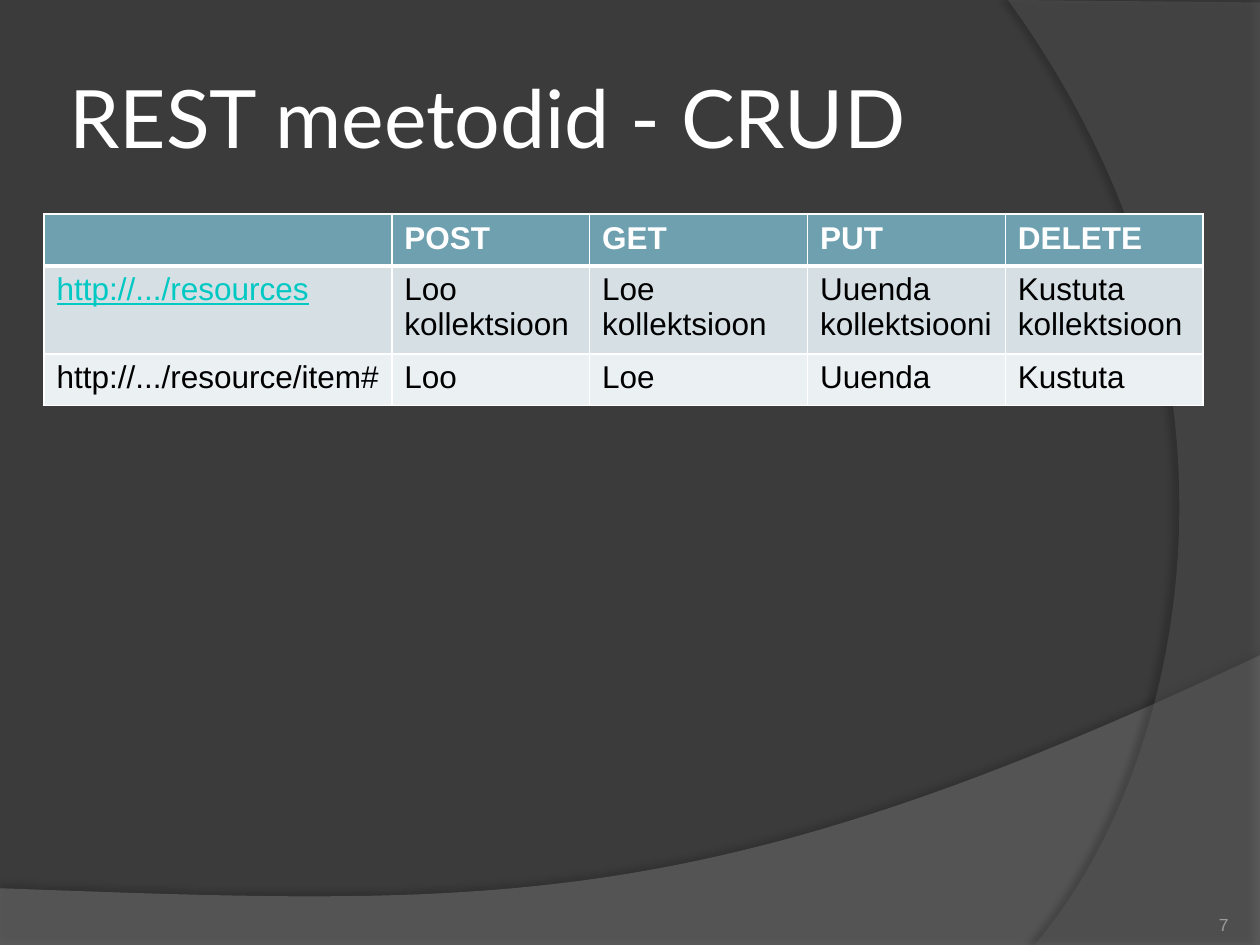
from dataclasses import dataclass

from lxml.etree import SubElement
from pptx import Presentation
from pptx.dml.color import RGBColor
from pptx.enum.text import MSO_ANCHOR as Anchor, PP_ALIGN as Align
from pptx.oxml.ns import qn
from pptx.util import Inches, Pt


@dataclass(frozen=True)
class Theme:
    background: str = "3B3B3B"
    wave: str = "7F7F7F"
    arc: str = "5E5E5E"
    shadow: str = "000000"
    white: str = "FFFFFF"
    text: str = "000000"
    link: str = "00C8C3"
    header: str = "6EA0B0"
    bands: tuple = ("D5DFE4", "EBF0F2")
    number: str = "9D9B9A"
    title_font: str = "Lato"
    body_font: str = "Arial"
    title_size: int = 46
    table_size: int = 18
    number_size: int = 10


THEME = Theme()
COLUMN_WIDTHS = (2.76, 1.57, 1.73, 1.57, 1.57)
ROW_HEIGHT = 0.41
ROWS = (
    ("", "POST", "GET", "PUT", "DELETE"),
    ("http://.../resources", "Loo kollektsioon", "Loe kollektsioon",
     "Uuenda kollektsiooni", "Kustuta kollektsioon"),
    ("http://.../resource/item#", "Loo", "Loe", "Uuenda", "Kustuta"),
)


def rgb(color):
    return RGBColor.from_string(color)


def style_text(paragraph, font, size, color, bold=False, underline=False):
    for run in paragraph.runs:
        run.font.name = font
        run.font.size = Pt(size)
        run.font.color.rgb = rgb(color)
        run.font.bold = bold
        run.font.underline = underline


def set_frame(text_frame, inset, anchor):
    text_frame.word_wrap = True
    text_frame.vertical_anchor = anchor
    text_frame.margin_left = text_frame.margin_right = Inches(inset)
    text_frame.margin_top = text_frame.margin_bottom = Inches(inset)


def add_alpha(color_element, percent):
    SubElement(color_element, qn("a:alpha"), val=str(percent * 1000))


def bezier(start, control_1, control_2, end, steps=48):
    """Points along a cubic curve, both ends included."""
    points = []
    for step in range(steps + 1):
        t = step / steps
        weights = ((1 - t) ** 3, 3 * t * (1 - t) ** 2, 3 * t * t * (1 - t), t ** 3)
        points.append(tuple(
            sum(w * v for w, v in zip(weights, values))
            for values in zip(start, control_1, control_2, end)))
    return points


def add_backdrop(slide, box, points, color, opacity, shadow):
    """Translucent shape with a soft shadow; points are relative to the box."""
    left, top = box
    corners = [(Inches(left + x), Inches(top + y)) for x, y in points]
    builder = slide.shapes.build_freeform(*corners[0])
    builder.add_line_segments(corners[1:], close=True)
    shape = builder.convert_to_shape()
    shape.fill.solid()
    shape.fill.fore_color.rgb = rgb(color)
    shape.line.fill.background()
    properties = shape.element.spPr
    add_alpha(properties.find(qn("a:solidFill"))[0], opacity)

    shadow_opacity, blur, distance, angle = shadow
    effects = SubElement(properties, qn("a:effectLst"))
    outer = SubElement(
        effects, qn("a:outerShdw"), blurRad=str(Pt(blur)), dist=str(Pt(distance)),
        dir=str(angle * 60000), algn="ctr", rotWithShape="0")
    add_alpha(SubElement(outer, qn("a:srgbClr"), val=THEME.shadow), shadow_opacity)


def add_title(slide, box, text):
    title = slide.shapes.title
    title.left, title.top, title.width, title.height = map(Inches, box)
    # Bring the title in front of the backdrop
    title.element.getparent().append(title.element)
    set_frame(title.text_frame, 0.05, Anchor.MIDDLE)
    title.text_frame.text = text
    paragraph = title.text_frame.paragraphs[0]
    paragraph.alignment = Align.LEFT
    style_text(paragraph, THEME.title_font, THEME.title_size, THEME.white)


def add_slide_number(slide, box, number):
    text_frame = slide.shapes.add_textbox(*map(Inches, box)).text_frame
    set_frame(text_frame, 0, Anchor.BOTTOM)
    text_frame.text = str(number)
    paragraph = text_frame.paragraphs[0]
    paragraph.alignment = Align.RIGHT
    style_text(paragraph, THEME.body_font, THEME.number_size, THEME.number)


def set_borders(cell, bottom=1, top=1):
    properties = cell._tc.get_or_add_tcPr()
    widths = {"a:lnL": 1, "a:lnR": 1, "a:lnT": top, "a:lnB": bottom}
    for index, (tag, width) in enumerate(widths.items()):
        line = SubElement(properties, qn(tag), w=str(Pt(width)))
        fill = SubElement(line, qn("a:solidFill"))
        SubElement(fill, qn("a:srgbClr"), val=THEME.white)
        properties.insert(index, line)  # borders come before the fill


def add_method_table(slide, left, top):
    table = slide.shapes.add_table(
        len(ROWS), len(COLUMN_WIDTHS), Inches(left), Inches(top),
        Inches(sum(COLUMN_WIDTHS)), Inches(ROW_HEIGHT * len(ROWS))).table
    for column, width in zip(table.columns, COLUMN_WIDTHS):
        column.width = Inches(width)
    for row, texts in enumerate(ROWS):
        is_header = row == 0
        for column, text in enumerate(texts):
            cell = table.cell(row, column)
            cell.fill.solid()
            cell.fill.fore_color.rgb = rgb(
                THEME.header if is_header else THEME.bands[row - 1])
            set_borders(cell, bottom=3 if is_header else 1, top=3 if row == 1 else 1)
            is_link = (row, column) == (1, 0)
            color = THEME.white if is_header else THEME.link if is_link else THEME.text
            cell.text_frame.text = text
            style_text(cell.text_frame.paragraphs[0], THEME.body_font,
                       THEME.table_size, color, bold=is_header, underline=is_link)


def main():
    presentation = Presentation()
    presentation.slide_width, presentation.slide_height = Inches(10), Inches(7.5)
    slide = presentation.slides.add_slide(presentation.slide_layouts[5])
    slide.background.fill.solid()
    slide.background.fill.fore_color.rgb = rgb(THEME.background)

    # Backdrop: wave along the bottom, arc down the right side
    wave = [(0, 1.85), (0, 2.31), (10, 2.31)]
    wave += bezier((10, 0), (5.59, 2.09), (3.91, 1.99), (0, 1.85))
    add_backdrop(slide, (0, 5.2), wave, THEME.wave, 45, (35, 4, 3.5, 270))
    arc = [(2, 0.02), (2, 7.5)]
    arc += bezier((0.21, 7.5), (1.35, 6.19), (2.18, 3), (0, 0))
    add_backdrop(slide, (8, 0), arc, THEME.arc, 40, (45, 4, 4, 180))

    # Content
    add_title(slide, (0.5, 0.3, 8.17, 1.25), "REST meetodid - CRUD")
    add_slide_number(slide, (8.92, 7.02, 0.83, 0.4), 7)
    add_method_table(slide, 0.35, 1.7)
    presentation.save("out.pptx")


if __name__ == "__main__":
    main()
